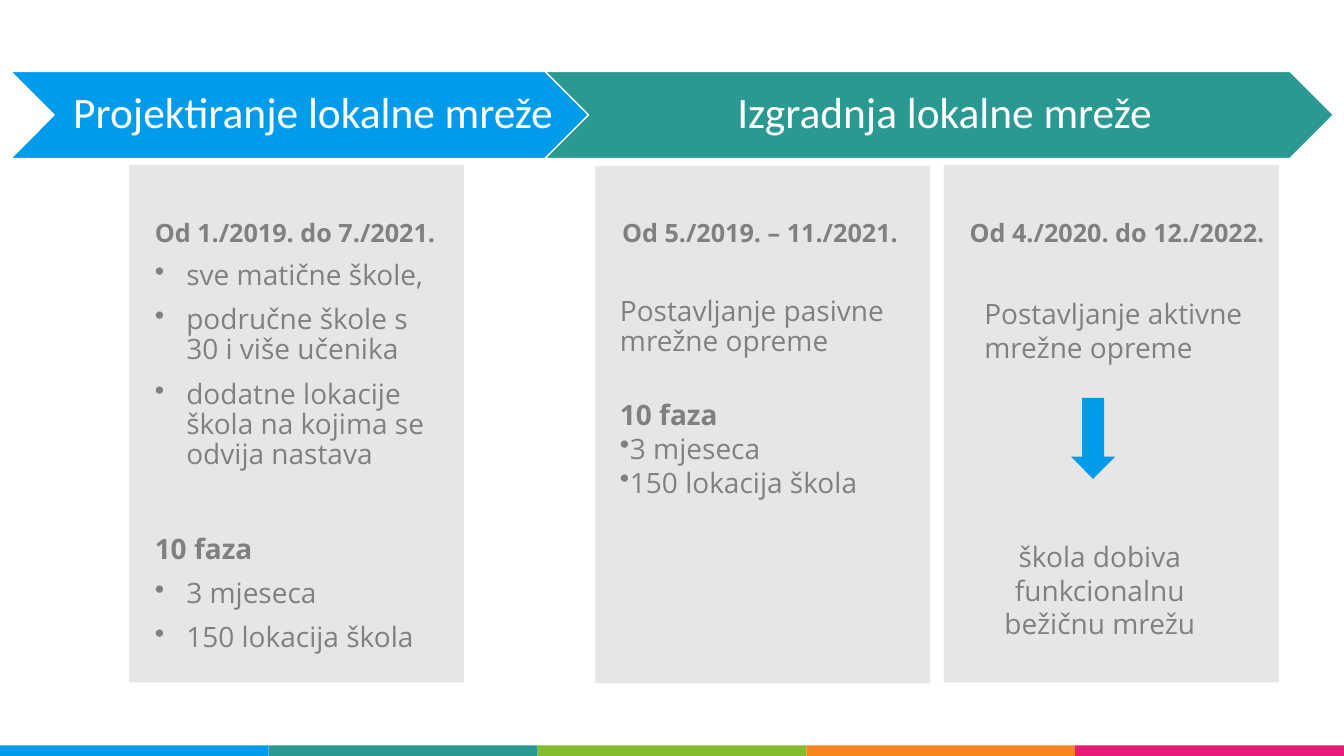
from lxml import etree
from pptx import Presentation
from pptx import util as u
from pptx.dml.color import RGBColor
from pptx.enum import shapes, text
from pptx.oxml import ns

BLUE = RGBColor(0x00, 0x9B, 0xEA)
TEAL = RGBColor(0x29, 0x99, 0x91)
GREEN = RGBColor(0x84, 0xBC, 0x2E)
ORANGE = RGBColor(0xF8, 0x85, 0x1B)
PINK = RGBColor(0xE7, 0x1A, 0x7A)
PANEL = RGBColor(0xE7, 0xE6, 0xE6)
GREY = RGBColor(0x80, 0x80, 0x80)
WHITE = RGBColor(0xFF, 0xFF, 0xFF)

SHAPE = shapes.MSO_SHAPE
CENTER = text.PP_ALIGN.CENTER
LEFT = text.PP_ALIGN.LEFT
WIDTH, HEIGHT = 1280, 720
INDENT = 30


def px(length):
    return u.Emu(length * 9525)


def write(frame, words, size=20, bold=False, color=GREY, font="Open Sans",
          align=LEFT, line=None, before=None, bullet_margin=None):
    paragraph = frame.paragraphs[0]
    if paragraph.runs:
        paragraph = frame.add_paragraph()
    paragraph.alignment = align
    if line is not None:
        paragraph.line_spacing = line
    if before is not None:
        paragraph.space_before = u.Pt(before)
    run = paragraph.add_run()
    run.text = words
    run.font.size = u.Pt(size)
    run.font.bold = bold
    run.font.name = font
    run.font.color.rgb = color
    if bullet_margin is not None:
        properties = paragraph._p.get_or_add_pPr()
        properties.set("marL", str(px(bullet_margin)))
        properties.set("indent", str(px(-INDENT)))
        etree.SubElement(properties, ns.qn("a:buChar")).set("char", "•")


class Board:
    def __init__(self, slide):
        self.slide = slide

    def block(self, kind, left, top, width, height, fill, outline=None):
        block = self.slide.shapes.add_shape(
            kind, px(left), px(top), px(width), px(height))
        block.shadow.inherit = False
        block.fill.solid()
        block.fill.fore_color.rgb = fill
        if outline is None:
            block.line.fill.background()
        else:
            block.line.color.rgb = outline
            block.line.width = u.Pt(1)
        return block

    def stage(self, words, left, width, fill):
        frame = self.block(SHAPE.CHEVRON, left, 68, width, 83, fill, WHITE).text_frame
        frame.word_wrap = True
        frame.vertical_anchor = text.MSO_ANCHOR.MIDDLE
        frame.margin_left, frame.margin_right = px(14), px(4)
        write(frame, words, size=31, color=WHITE, font="Calibri",
              align=CENTER, line=0.9)

    def textbox(self, left, top, width, height):
        frame = self.slide.shapes.add_textbox(
            px(left), px(top), px(width), px(height)).text_frame
        frame.word_wrap = True
        return frame


def main():
    deck = Presentation()
    deck.slide_width, deck.slide_height = px(WIDTH), px(HEIGHT)
    board = Board(deck.slides.add_slide(deck.slide_layouts[6]))

    stripes = (BLUE, TEAL, GREEN, ORANGE, PINK)
    stripe_width = WIDTH // len(stripes)
    for index, color in enumerate(stripes):
        board.block(SHAPE.RECTANGLE, index * stripe_width, 710,
                    stripe_width, HEIGHT - 710, color)

    board.stage("Projektiranje lokalne mreže", 10, 566, BLUE)
    board.stage("Izgradnja lokalne mreže", 519, 751, TEAL)

    for left, top in ((123, 157), (567, 158), (899, 157)):
        board.block(SHAPE.RECTANGLE, left, top, 319, 493, PANEL)

    phases = ("3 mjeseca", "150 lokacija škola")

    design = board.textbox(138, 202, 288, 459)
    write(design, "Od 1./2019. do 7./2021.", size=18, bold=True)
    for item in ("sve matične škole,", "područne škole s 30 i više učenika",
                 "dodatne lokacije škola na kojima se odvija nastava"):
        write(design, item, line=0.9, before=10, bullet_margin=INDENT)
    write(design, "10 faza", bold=True, line=0.9, before=46)
    for item in phases:
        write(design, item, line=0.9, before=10, bullet_margin=INDENT)

    passive = board.textbox(581, 278, 281, 188)
    write(passive, "Postavljanje pasivne mrežne opreme", line=0.9, before=10)
    write(passive, "10 faza", bold=True, before=29)
    for item in phases:
        write(passive, item, bullet_margin=0)

    active = board.textbox(928, 278, 267, 95)
    write(active, "Postavljanje aktivne mrežne opreme")
    board.block(SHAPE.DOWN_ARROW, 1020, 379, 42, 77, BLUE)
    outcome = board.textbox(928, 509, 239, 99)
    write(outcome, "škola dobiva funkcionalnu bežičnu mrežu", align=CENTER)

    for period, left, width in (("Od 4./2020. do 12./2022.", 914, 304),
                                ("Od 5./2019. – 11./2021.", 583, 289)):
        write(board.textbox(left, 202, width, 38), period, size=18, bold=True)

    deck.save("out.pptx")


if __name__ == "__main__":
    main()
